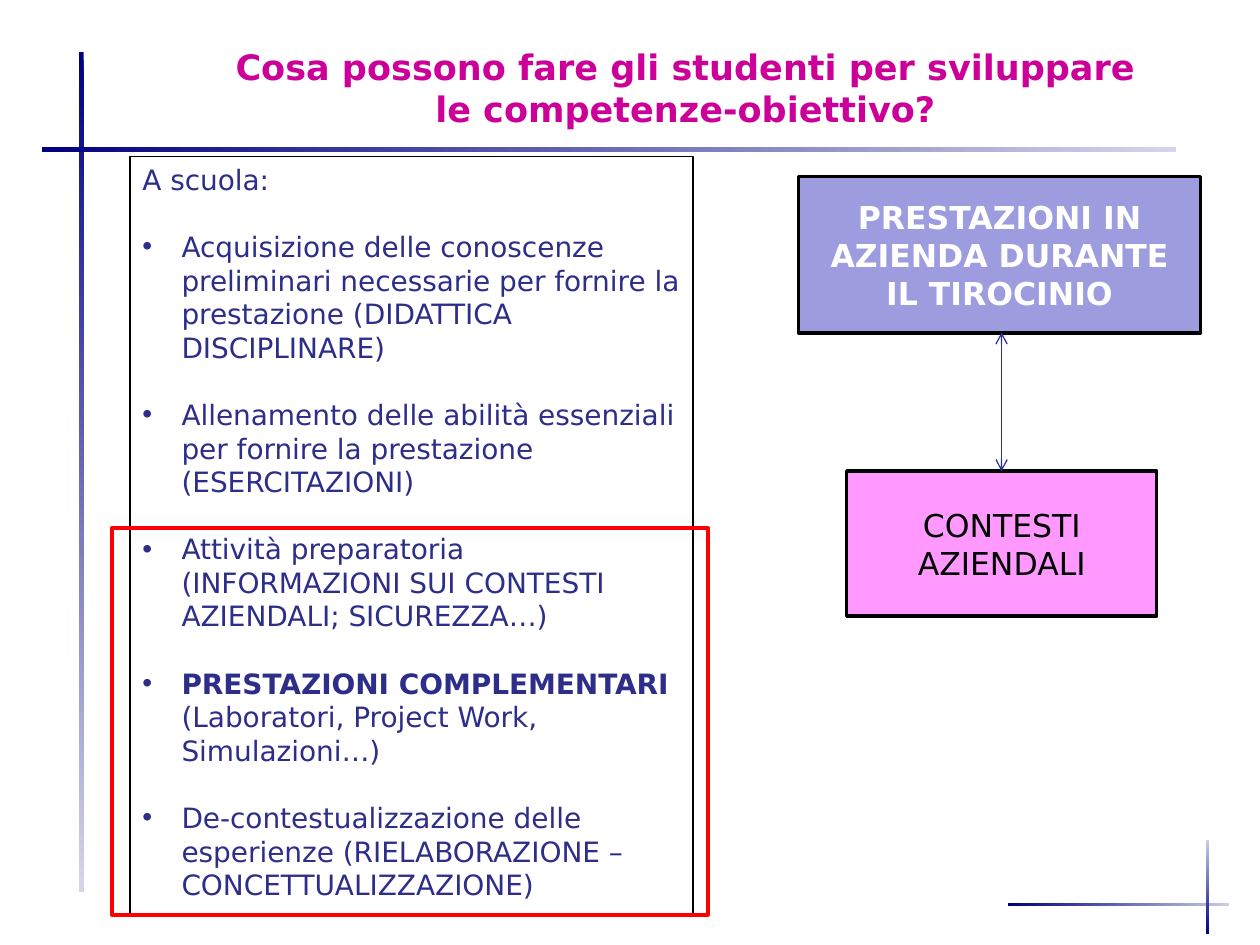
"""Build a slide on how students can develop the target competences."""
from lxml.etree import SubElement
from pptx import Presentation
from pptx.dml.color import RGBColor
from pptx.enum.shapes import MSO_CONNECTOR as Connector, MSO_SHAPE as Shape
from pptx.enum.text import MSO_ANCHOR as Anchor, PP_ALIGN as Align
from pptx.oxml.ns import qn
from pptx.util import Cm, Pt

NAVY = RGBColor(0x00, 0x00, 0x80)
MIST = RGBColor(0xD5, 0xD5, 0xEA)
PALE = RGBColor(0xCB, 0xCB, 0xE5)
MAGENTA = RGBColor(0xCC, 0x00, 0x99)
INDIGO = RGBColor(0x2D, 0x2D, 0x8A)
ARROW = RGBColor(0x2F, 0x2F, 0x98)
LAVENDER = RGBColor(0x9C, 0x9C, 0xDF)
PINK = RGBColor(0xFF, 0x99, 0xFF)
RED = RGBColor(0xFF, 0x00, 0x00)
BLACK = RGBColor(0x00, 0x00, 0x00)
WHITE = RGBColor(0xFF, 0xFF, 0xFF)
FONT = "DejaVu Sans"


def write(paragraph, text, size=16, color=INDIGO, bold=False, align=Align.LEFT):
    paragraph.alignment = align
    run = paragraph.add_run()
    run.text = text
    run.font.name = FONT
    run.font.size = Pt(size)
    run.font.bold = bold
    run.font.color.rgb = color


def add_box(left, top, width, height, line, line_width, fill=None):
    shape = slide.shapes.add_shape(Shape.RECTANGLE, Cm(left), Cm(top), Cm(width), Cm(height))
    shape.shadow.inherit = False
    if fill is None:
        shape.fill.background()
    else:
        shape.fill.solid()
        shape.fill.fore_color.rgb = fill
    if line is None:
        shape.line.fill.background()
    else:
        shape.line.color.rgb = line
        shape.line.width = Pt(line_width)
    return shape


presentation = Presentation()
presentation.slide_width = Cm(25.4)
presentation.slide_height = Cm(19.05)
slide = presentation.slides.add_slide(presentation.slide_layouts[6])

bars = [
    (1.59, 1.05, 0.1, 16.94, NAVY, MIST, 270),
    (20.32, 18.21, 4.45, 0.05, NAVY, PALE, 0),
    (24.32, 16.93, 0.05, 1.9, PALE, NAVY, 270),
    (0.84, 2.97, 22.86, 0.1, NAVY, MIST, 0),
]
for left, top, width, height, start, end, angle in bars:
    bar = add_box(left, top, width, height, None, 0)
    bar.fill.gradient()
    bar.fill.gradient_angle = angle
    for stop, color in zip(bar.fill.gradient_stops, (start, end)):
        stop.color.rgb = color

title = slide.shapes.add_textbox(Cm(4.37), Cm(0.79), Cm(18.9), Cm(1.96))
title.text_frame.word_wrap = True
write(title.text_frame.paragraphs[0],
      "Cosa possono fare gli studenti per sviluppare le competenze-obiettivo?",
      size=20, color=MAGENTA, bold=True, align=Align.CENTER)

internship = add_box(16.1, 3.56, 8.1, 3.15, BLACK, 2, LAVENDER)
write(internship.text_frame.paragraphs[0], "PRESTAZIONI IN AZIENDA DURANTE IL TIROCINIO",
      size=18, color=WHITE, bold=True, align=Align.CENTER)

school = add_box(2.62, 3.15, 11.35, 15.29, BLACK, 0.75)
school.text_frame.vertical_anchor = Anchor.TOP
write(school.text_frame.paragraphs[0], "A scuola:")
activities = [
    ("", "Acquisizione delle conoscenze preliminari necessarie per fornire la "
         "prestazione (DIDATTICA DISCIPLINARE)"),
    ("", "Allenamento delle abilità essenziali per fornire la prestazione (ESERCITAZIONI)"),
    ("", "Attività preparatoria (INFORMAZIONI SUI CONTESTI AZIENDALI; SICUREZZA…)"),
    ("PRESTAZIONI COMPLEMENTARI ", "(Laboratori, Project Work, Simulazioni…)"),
    ("", "De-contestualizzazione delle esperienze (RIELABORAZIONE – CONCETTUALIZZAZIONE)"),
]
for lead, text in activities:
    paragraph = school.text_frame.add_paragraph()
    paragraph.space_before = Pt(19.2)
    properties = paragraph._p.get_or_add_pPr()
    properties.set("marL", str(Cm(0.79)))
    properties.set("indent", str(-Cm(0.79)))
    SubElement(properties, qn("a:buFont"), typeface="Arial")
    SubElement(properties, qn("a:buChar"), char="•")
    if lead:
        write(paragraph, lead, bold=True)
    write(paragraph, text)

contexts = add_box(17.07, 9.5, 6.25, 2.92, BLACK, 2, PINK)
write(contexts.text_frame.paragraphs[0], "CONTESTI AZIENDALI",
      size=18, color=BLACK, align=Align.CENTER)

arrow = slide.shapes.add_connector(Connector.STRAIGHT, Cm(20.19), Cm(6.7), Cm(20.19), Cm(9.5))
arrow.line.color.rgb = ARROW
arrow.line.width = Pt(0.75)
outline = arrow.line._get_or_add_ln()
for end in ("a:headEnd", "a:tailEnd"):
    SubElement(outline, qn(end), type="arrow")
SubElement(arrow._element.spPr, qn("a:effectLst"))

add_box(2.26, 10.64, 12.01, 7.8, RED, 2.25)

presentation.save("out.pptx")
